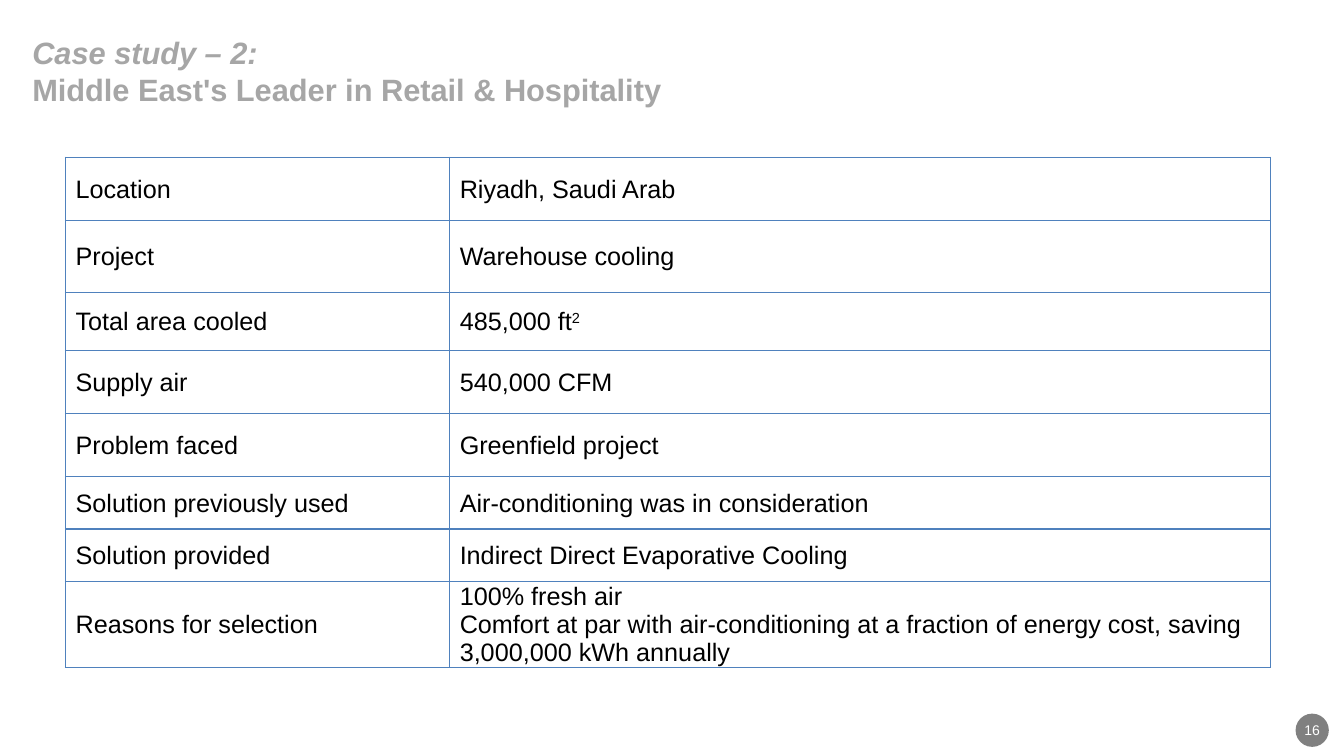
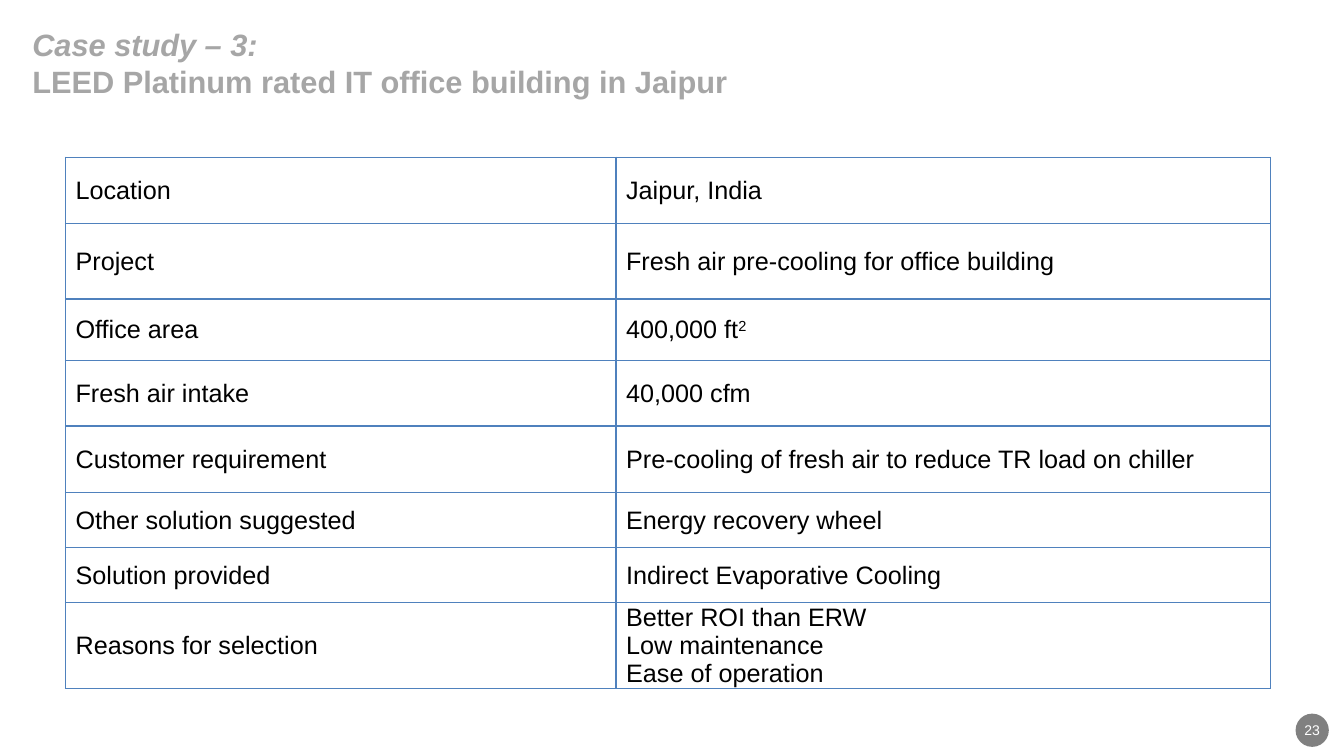
import copy
import dataclasses

import lxml.etree
import pptx
import pptx.dml.color
import pptx.enum.shapes
import pptx.enum.text
import pptx.oxml.ns
import pptx.util

Inches = pptx.util.Inches
Pt = pptx.util.Pt
RGBColor = pptx.dml.color.RGBColor
MIDDLE = pptx.enum.text.MSO_ANCHOR.MIDDLE
ALIGN = pptx.enum.text.PP_ALIGN

# Shared look
FONT = "Arial"
TITLE_GRAY = RGBColor(0xA6, 0xA6, 0xA6)
BADGE_GRAY = RGBColor(0x80, 0x80, 0x80)
BORDER_BLUE = RGBColor(0x4F, 0x81, 0xBD)
BLACK = RGBColor(0, 0, 0)
WHITE = RGBColor(255, 255, 255)

# Shared geometry, in inches
SLIDE_WIDTH, SLIDE_HEIGHT = 13.33, 7.5
TITLE_LEFT, TITLE_TOP = 0.22, 0.08
TABLE_LEFT, TABLE_TOP, TABLE_WIDTH = 0.65, 1.56, 11.95
ROW_HEIGHTS = (0.63, 0.71, 0.58, 0.62, 0.63, 0.52, 0.52, 0.71)
BADGE_LEFT, BADGE_TOP, BADGE_SIZE = 12.85, 7.08, 0.33


@dataclasses.dataclass(frozen=True)
class CaseStudy:
    number: int
    page: int
    title: str
    title_size: tuple[float, float]
    label_width: float
    row_scale: float
    rows: tuple[tuple[str, str], ...]  # "^" starts a superscript, "\n" a paragraph


CASE_STUDIES = (
    CaseStudy(
        2, 16, "Middle East's Leader in Retail & Hospitality", (10.85, 1.25), 3.81, 1,
        (
            ("Location", "Riyadh, Saudi Arab"),
            ("Project", "Warehouse cooling"),
            ("Total area cooled", "485,000 ft^2"),
            ("Supply air", "540,000 CFM"),
            ("Problem faced", "Greenfield project"),
            ("Solution previously used", "Air-conditioning was in consideration"),
            ("Solution provided", "Indirect Direct Evaporative Cooling"),
            ("Reasons for selection",
             "100% fresh air\nComfort at par with air-conditioning at a fraction "
             "of energy cost, saving 3,000,000 kWh annually"),
        ),
    ),
    CaseStudy(
        3, 23, "LEED Platinum rated IT office building in Jaipur", (10.33, 1.09), 5.46, 1.05,
        (
            ("Location", "Jaipur, India"),
            ("Project", "Fresh air pre-cooling for office building"),
            ("Office area", "400,000 ft^2"),
            ("Fresh air intake", "40,000 cfm"),
            ("Customer requirement", "Pre-cooling of fresh air to reduce TR load on chiller"),
            ("Other solution suggested", "Energy recovery wheel"),
            ("Solution provided", "Indirect Evaporative Cooling"),
            ("Reasons for selection", "Better ROI than ERW\nLow maintenance\nEase of operation"),
        ),
    ),
)


def add_text(paragraph, text: str, *, size: float, color: RGBColor, bold: bool = False,
             italic: bool = False, superscript: bool = False):
    """Append one formatted run to a paragraph."""
    run = paragraph.add_run()
    run.text = text
    font = run.font
    font.name, font.size, font.bold, font.italic = FONT, Pt(size), bold, italic
    font.color.rgb = color
    if superscript:
        run._r.get_or_add_rPr().set("baseline", "30000")
    return run


def add_title(slide, study: CaseStudy) -> None:
    title = slide.shapes.title
    title.left, title.top = Inches(TITLE_LEFT), Inches(TITLE_TOP)
    title.width, title.height = (Inches(length) for length in study.title_size)
    frame = title.text_frame
    frame.vertical_anchor = MIDDLE
    frame.auto_size = pptx.enum.text.MSO_AUTO_SIZE.NONE
    paragraph = frame.paragraphs[0]
    paragraph.alignment = ALIGN.LEFT
    style = dict(size=22, color=TITLE_GRAY, bold=True)
    heading = add_text(paragraph, f"Case study – {study.number}:", italic=True, **style)
    # The break carries the run's format so that the line keeps its height
    paragraph.add_line_break()
    paragraph._p[-1].append(copy.deepcopy(heading._r.rPr))
    add_text(paragraph, study.title, **style)


def set_borders(cell, color: RGBColor, width: float) -> None:
    properties = cell._tc.get_or_add_tcPr()
    qualified = pptx.oxml.ns.qn
    for side in ("a:lnL", "a:lnR", "a:lnT", "a:lnB"):
        line = lxml.etree.SubElement(properties, qualified(side), w=str(Pt(width)))
        fill = lxml.etree.SubElement(line, qualified("a:solidFill"))
        lxml.etree.SubElement(fill, qualified("a:srgbClr"), val=str(color))


def fill_cell(cell, text: str) -> None:
    set_borders(cell, BORDER_BLUE, 1)
    cell.fill.background()
    cell.vertical_anchor = MIDDLE
    cell.margin_left, cell.margin_bottom = Inches(0.1), 0
    cell.margin_top = cell.margin_right = Inches(0.01)
    frame = cell.text_frame
    for index, line in enumerate(text.split("\n")):
        paragraph = frame.add_paragraph() if index else frame.paragraphs[0]
        base, _, raised = line.partition("^")
        add_text(paragraph, base, size=18, color=BLACK)
        if raised:
            add_text(paragraph, raised, size=18, color=BLACK, superscript=True)


def add_fact_table(slide, study: CaseStudy) -> None:
    heights = [height * study.row_scale for height in ROW_HEIGHTS]
    table = slide.shapes.add_table(
        len(study.rows), 2, Inches(TABLE_LEFT), Inches(TABLE_TOP),
        Inches(TABLE_WIDTH), Inches(sum(heights))).table
    table.first_row = table.horz_banding = False
    table.columns[0].width = Inches(study.label_width)
    table.columns[1].width = Inches(TABLE_WIDTH - study.label_width)
    for row, height, texts in zip(table.rows, heights, study.rows):
        row.height = Inches(height)
        for cell, text in zip(row.cells, texts):
            fill_cell(cell, text)


def add_page_badge(slide, page: int) -> None:
    badge = slide.shapes.add_shape(
        pptx.enum.shapes.MSO_SHAPE.OVAL, Inches(BADGE_LEFT), Inches(BADGE_TOP),
        Inches(BADGE_SIZE), Inches(BADGE_SIZE))
    badge.shadow.inherit = False
    badge.fill.solid()
    badge.fill.fore_color.rgb = BADGE_GRAY
    badge.line.fill.background()
    frame = badge.text_frame
    frame.word_wrap = False
    frame.vertical_anchor = MIDDLE
    paragraph = frame.paragraphs[0]
    paragraph.alignment = ALIGN.CENTER
    add_text(paragraph, str(page), size=10, color=WHITE)


def main() -> None:
    presentation = pptx.Presentation()
    presentation.slide_width = Inches(SLIDE_WIDTH)
    presentation.slide_height = Inches(SLIDE_HEIGHT)
    title_only = presentation.slide_layouts.get_by_name("Title Only")
    for study in CASE_STUDIES:
        slide = presentation.slides.add_slide(title_only)
        add_page_badge(slide, study.page)
        add_title(slide, study)
        add_fact_table(slide, study)
    presentation.save("out.pptx")


if __name__ == "__main__":
    main()
